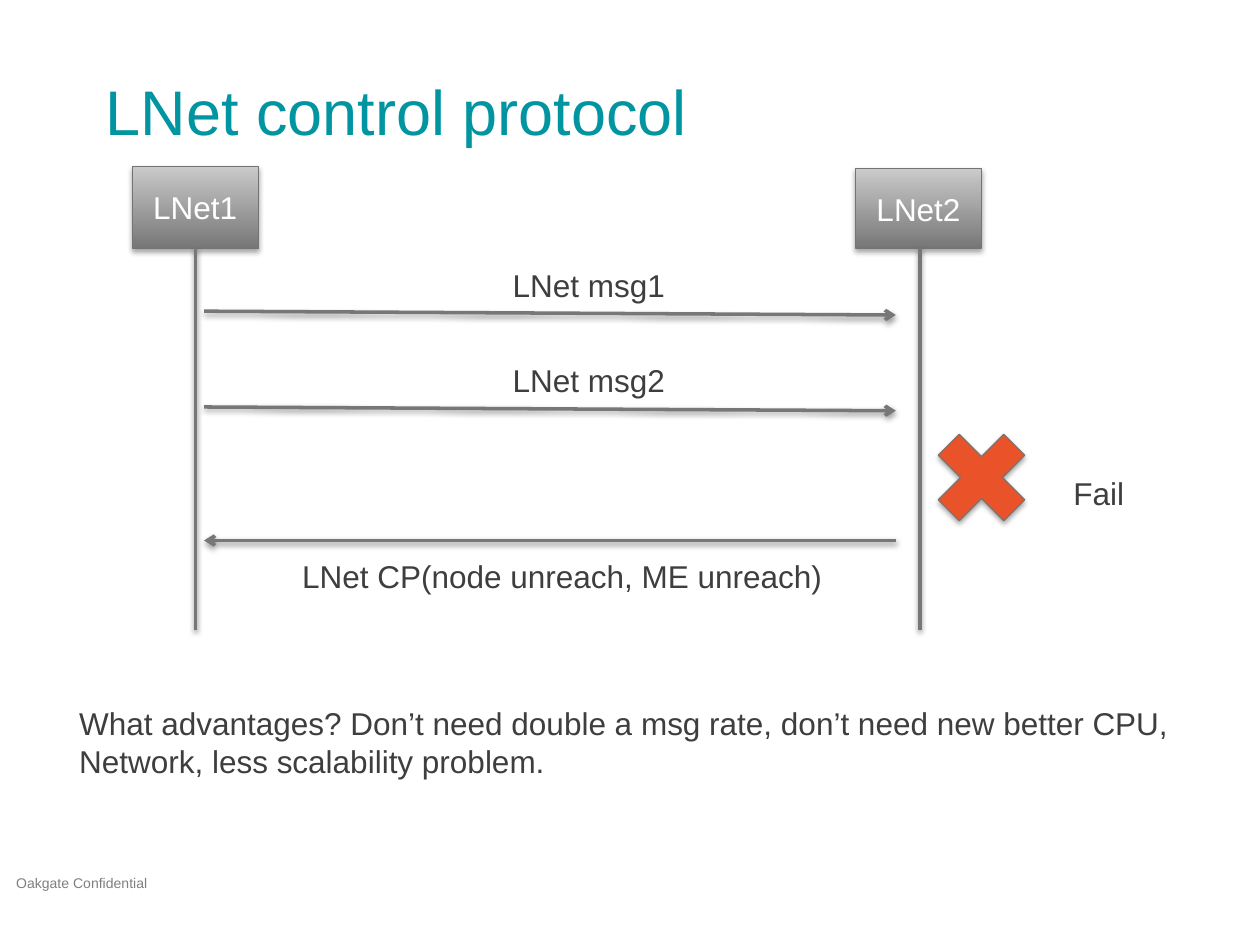
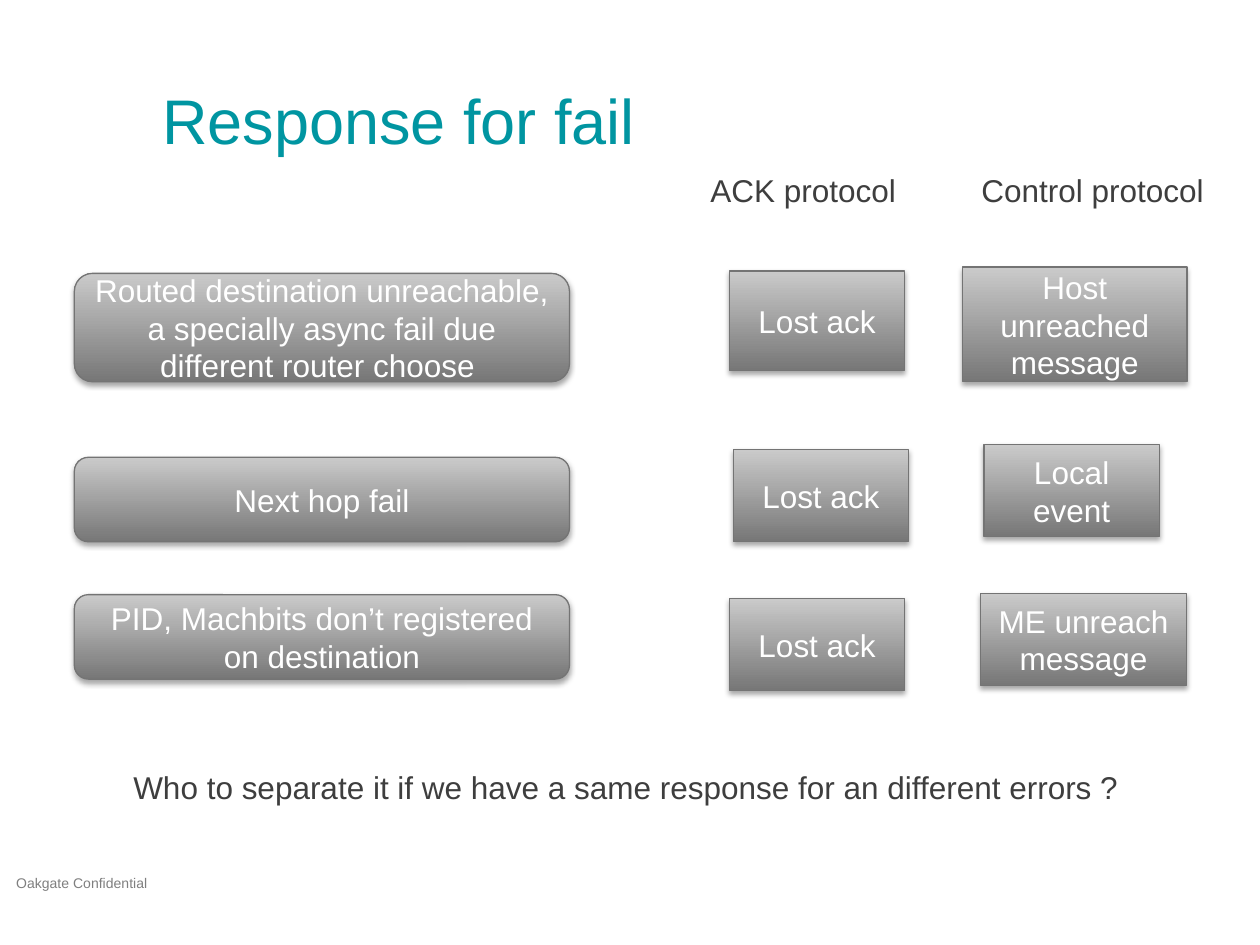
from lxml.etree import SubElement
from pptx import Presentation
from pptx.dml.color import RGBColor
from pptx.enum.shapes import MSO_CONNECTOR, MSO_SHAPE
from pptx.enum.text import MSO_ANCHOR, MSO_AUTO_SIZE, PP_ALIGN
from pptx.oxml.ns import qn
from pptx.util import Inches, Pt

# Shared look
COLORS = {"title": "0095A1", "text": "3E3E3E", "foot": "7F7F7F", "white": "FFFFFF",
          "dark": "777777", "light": "CACACA", "edge": "747474", "cross": "EA5329",
          "shade": "000000"}
FONT = "Arial"
FOOTER = "Oakgate Confidential"

# Slide 1: sequence between two nodes
FLOW = "LNet control protocol"
NODES = [("LNet1", 1.05, 1.32), ("LNet2", 6.79, 1.34)]
LIFE_X = (1.55, 7.3)
NODE_END, LIFE_END = 1.97, 5
NEAR, FAR = 1.62, 7.11
ARROWS = [  # start x, start y, end x, end y
    (NEAR, 2.47, FAR, 2.5),
    (NEAR, 3.23, FAR, 3.26),
    (FAR, 4.29, NEAR, 4.29),
]
LABELS = [  # text, left, top, width
    ("LNet msg1", 3.97, 2.06, 1.42),
    ("LNet msg2", 3.97, 2.82, 1.42),
    ("LNet CP(node unreach, ME unreach)", 2.3, 4.37, 4.43),
    ("Fail", 8.42, 3.71, 0.61),
]
GAIN = ("What advantages? Don’t need double a msg rate, "
        "don’t need new better CPU, Network, less scalability problem.")

# Slide 2: answers to each kind of failure
REPLY = "Response for fail"
HEADS = [("ACK protocol", 5.54, 1.31, 1.7), ("Control protocol", 7.69, 1.31, 1.98)]
FAULT_X, FAULT_W, ACK_W = 0.59, 3.93, 1.39
FAULTS = [  # text, top, height
    ("Routed destination unreachable, a specially async fail due different router choose ",
     2.17, 0.86),
    ("Next hop fail", 3.63, 0.67),
    ("PID, Machbits don’t registered on destination", 4.72, 0.67),
]
ACKS = [(5.79, 2.15, 0.79), (5.82, 3.57, 0.73), (5.79, 4.75, 0.73)]  # left, top, height
EVENTS = [  # text, left, top, width, height
    ("Host unreached message", 7.64, 2.12, 1.78, 0.91),
    ("Local event", 7.81, 3.53, 1.39, 0.73),
    ("ME unreach message", 7.78, 4.71, 1.64, 0.73),
]
ASK = ("Who to separate it if we have a same response for an different errors ?",
       0.96, 6.05, 8.1)


def rgb(name):
    return RGBColor.from_string(COLORS[name])


def write(frame, words, color, size=18):
    run = frame.paragraphs[0].add_run()
    run.text = words
    run.font.name, run.font.size = FONT, Pt(size)
    run.font.color.rgb = rgb(color)


def shade(props, alpha, blur, dist):
    """Add a soft shadow that falls straight down."""
    effects = props.find(qn("a:effectLst"))
    if effects is None:
        effects = SubElement(props, qn("a:effectLst"))
    outer = SubElement(effects, qn("a:outerShdw"), blurRad=str(Pt(blur)),
                       dist=str(Pt(dist)), dir="5400000", rotWithShape="0")
    tone = SubElement(outer, qn("a:srgbClr"), val=COLORS["shade"])
    SubElement(tone, qn("a:alpha"), val=str(alpha * 1000))


def label(slide, words, left, top, width, height=0.4, wrap=False, color="text", size=18):
    box = slide.shapes.add_textbox(*map(Inches, (left, top, width, height)))
    frame = box.text_frame
    frame.word_wrap = wrap
    frame.auto_size = MSO_AUTO_SIZE.SHAPE_TO_FIT_TEXT
    write(frame, words, color, size)


def solid(slide, kind, left, top, width, height):
    """Add a shape with the common edge and shadow."""
    shape = slide.shapes.add_shape(kind, *map(Inches, (left, top, width, height)))
    shape.line.color.rgb = rgb("edge")
    shape.line.width = Pt(0.75)
    shape.shadow.inherit = False
    shade(shape._element.spPr, 35, 3.1, 1.8)
    return shape


def block(slide, words, left, top, width, height, kind=MSO_SHAPE.RECTANGLE):
    shape = solid(slide, kind, left, top, width, height)
    shape.fill.gradient()
    shape.fill.gradient_angle = 90
    for stop, name in zip(shape.fill.gradient_stops, ("dark", "light")):
        stop.color.rgb = rgb(name)
    frame = shape.text_frame
    frame.word_wrap = True
    frame.vertical_anchor = MSO_ANCHOR.MIDDLE
    frame.paragraphs[0].alignment = PP_ALIGN.CENTER
    write(frame, words, "white")


def link(slide, ends, arrow=False):
    line = slide.shapes.add_connector(MSO_CONNECTOR.STRAIGHT, *map(Inches, ends))
    line.line.color.rgb = rgb("dark")
    line.line.width = Pt(2)
    props = line._element.spPr
    if arrow:
        SubElement(props.find(qn("a:ln")), qn("a:tailEnd"), type="arrow")
    shade(props, 38, 3.1, 1.6)


def page(deck, title, left, top):
    """Add a slide with its footer and title."""
    slide = deck.slides.add_slide(deck.slide_layouts[6])
    label(slide, FOOTER, 0.03, 6.89, 1.44, 0.24, color="foot", size=8)
    box = slide.shapes.add_textbox(*map(Inches, (left, top, 6.59, 0.89)))
    frame = box.text_frame
    frame.word_wrap = True
    frame.vertical_anchor = MSO_ANCHOR.MIDDLE
    frame.margin_top = frame.margin_bottom = Inches(0.1)
    write(frame, title, "title", 36)
    return slide


def flow(deck):
    slide = page(deck, FLOW, 0.74, 0.43)
    for words, left, top in NODES:
        block(slide, words, left, top, 1, NODE_END - top)
    for x in LIFE_X:
        link(slide, (x, NODE_END, x, LIFE_END))
    for ends in ARROWS:
        link(slide, ends, arrow=True)
    cross = solid(slide, MSO_SHAPE.MATH_MULTIPLY, 7.29, 3.29, 1, 1)
    cross.fill.solid()
    cross.fill.fore_color.rgb = rgb("cross")
    for item in LABELS:
        label(slide, *item)
    label(slide, GAIN, 0.53, 5.54, 9.47, 0.71, wrap=True)


def reply(deck):
    slide = page(deck, REPLY, 1.19, 0.5)
    for words, top, height in FAULTS:
        block(slide, words, FAULT_X, top, FAULT_W, height,
              MSO_SHAPE.FLOWCHART_ALTERNATE_PROCESS)
    for left, top, height in ACKS:
        block(slide, "Lost ack", left, top, ACK_W, height)
    for item in EVENTS:
        block(slide, *item)
    for item in HEADS + [ASK]:
        label(slide, *item)


def main():
    deck = Presentation()
    deck.slide_width, deck.slide_height = Inches(10), Inches(7.5)
    flow(deck)
    reply(deck)
    deck.save("out.pptx")


if __name__ == "__main__":
    main()
